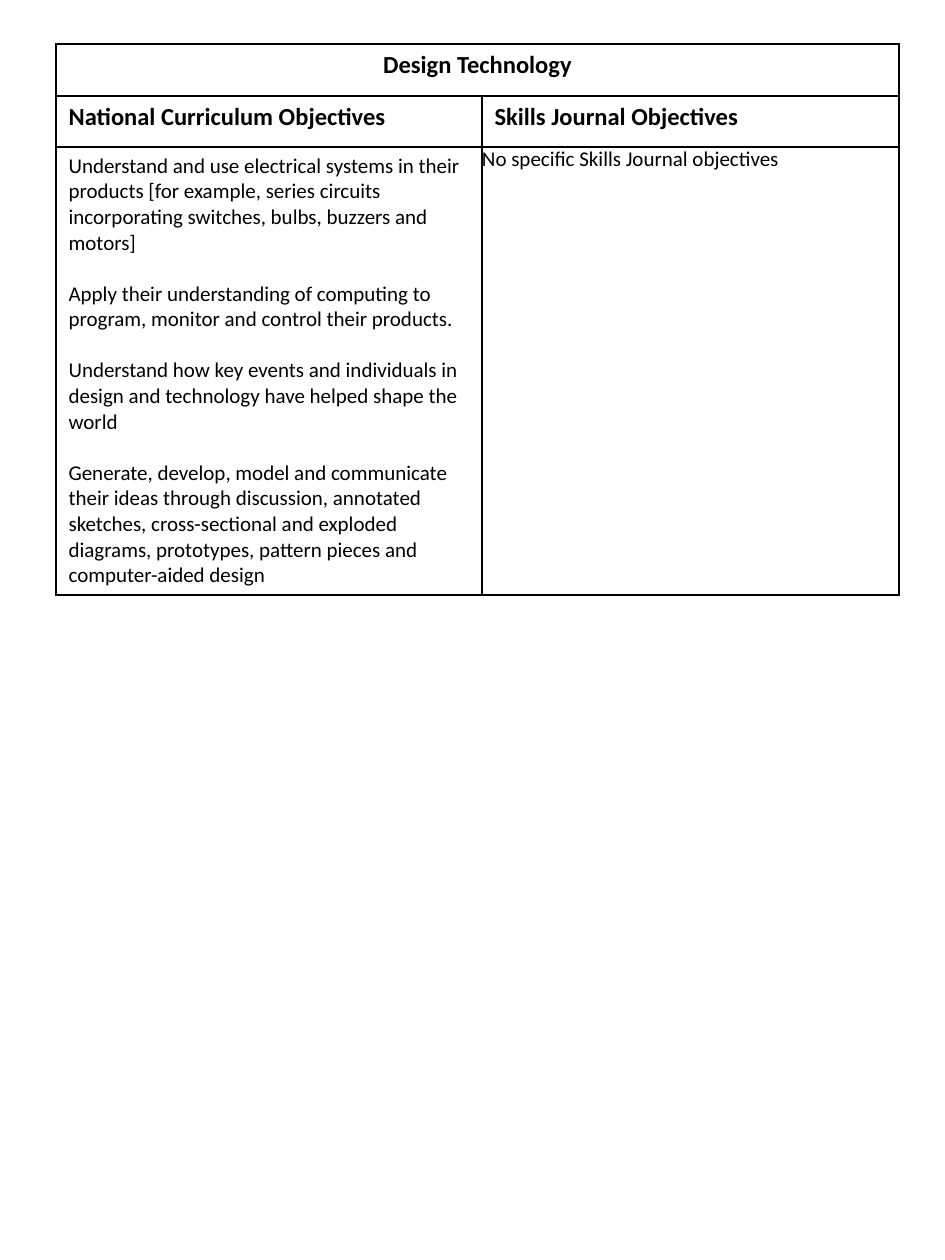
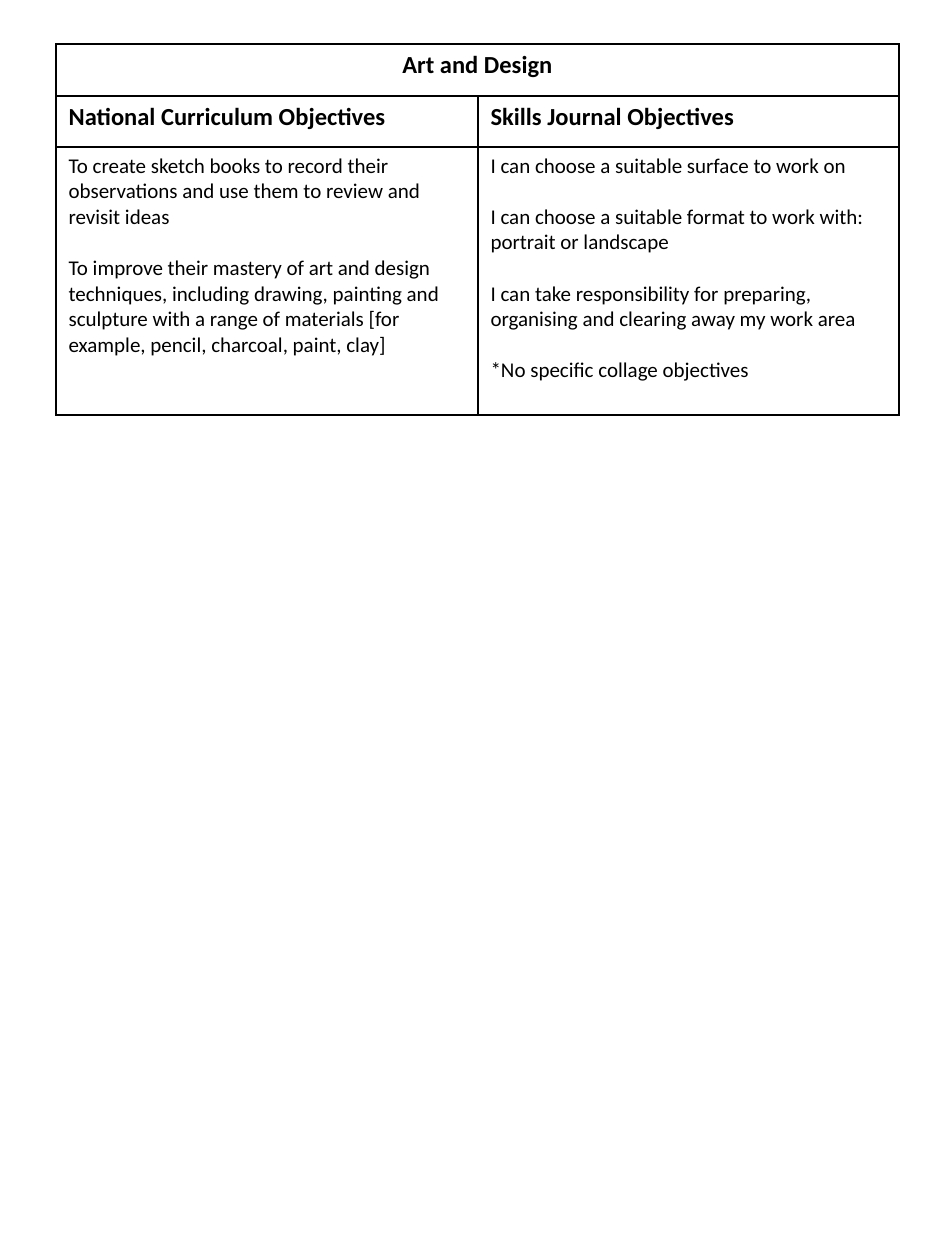
from dataclasses import dataclass

from lxml.etree import SubElement
from pptx import Presentation
from pptx.dml.color import RGBColor
from pptx.enum.text import PP_ALIGN as Align
from pptx.oxml.ns import qn
from pptx.slide import Slide
from pptx.table import _Cell as Cell
from pptx.util import Emu, Pt

EMU_PER_PX = 914400 / 126
PAGE_WIDTH, PAGE_HEIGHT = 945, 1260
TABLE_LEFT, TABLE_TOP = 56, 44
HEADING_HEIGHTS = (52, 51)
BLACK = "000000"
FONT = "Calibri"
HEADING_SIZE, BODY_SIZE = 14, 12
PARAGRAPH_GAP = 14.6
BORDER_WIDTH = 1
COLUMN_HEADINGS = ("National Curriculum Objectives", "Skills Journal Objectives")


@dataclass(frozen=True)
class Subject:
    title: str
    column_widths: tuple[int, int]
    body_height: int
    curriculum: tuple[str, ...]
    skills: tuple[str, ...]
    skills_flush: bool = False


SUBJECTS = (
    Subject(
        "Design Technology",
        (426, 417),
        448,
        (
            "Understand and use electrical systems in their products [for example, "
            "series circuits incorporating switches, bulbs, buzzers and motors]",
            "Apply their understanding of computing to program, monitor and control "
            "their products.",
            "Understand how key events and individuals in design and technology have "
            "helped shape the world",
            "Generate, develop, model and communicate their ideas through discussion, "
            "annotated sketches, cross-sectional and exploded diagrams, prototypes, "
            "pattern pieces and computer-aided design",
        ),
        ("No specific Skills Journal objectives",),
        skills_flush=True,
    ),
    Subject(
        "Art and Design",
        (422, 421),
        268,
        (
            "To create sketch books to record their observations and use them to "
            "review and revisit ideas",
            "To improve their mastery of art and design techniques, including drawing, "
            "painting and sculpture with a range of materials [for example, pencil, "
            "charcoal, paint, clay]",
        ),
        (
            "I can choose a suitable surface to work on",
            "I can choose a suitable format to work with: portrait or landscape",
            "I can take responsibility for preparing, organising and clearing away "
            "my work area",
            "*No specific collage objectives",
        ),
    ),
)


def px(length: int) -> Emu:
    return Emu(round(length * EMU_PER_PX))


def colour(value: str) -> RGBColor:
    return RGBColor.from_string(value)


def style_cell(cell: Cell) -> None:
    properties = cell._tc.get_or_add_tcPr()
    for edge in ("a:lnL", "a:lnR", "a:lnT", "a:lnB"):
        line = SubElement(properties, qn(edge), w=str(Pt(BORDER_WIDTH)))
        fill = SubElement(line, qn("a:solidFill"))
        SubElement(fill, qn("a:srgbClr"), val=BLACK)
    cell.fill.background()


def write_cell(cell: Cell, texts: tuple[str, ...], size: int, bold: bool = False,
               align: Align = Align.LEFT) -> None:
    frame = cell.text_frame
    for index, text in enumerate(texts):
        para = frame.add_paragraph() if index else frame.paragraphs[0]
        para.alignment = align
        if index:
            para.space_before = Pt(PARAGRAPH_GAP)
        span = para.add_run()
        span.text = text
        span.font.name = FONT
        span.font.size = Pt(size)
        span.font.bold = bold
        span.font.color.rgb = colour(BLACK)


def draw_objectives(page: Slide, subject: Subject) -> None:
    heights = (*HEADING_HEIGHTS, subject.body_height)
    table = page.shapes.add_table(
        len(heights), len(subject.column_widths), px(TABLE_LEFT), px(TABLE_TOP),
        px(sum(subject.column_widths)), px(sum(heights)),
    ).table
    table.first_row = False
    table.horz_banding = False
    for column, width in zip(table.columns, subject.column_widths):
        column.width = px(width)
    for row, height in zip(table.rows, heights):
        row.height = px(height)
    for cell in table.iter_cells():
        style_cell(cell)

    title_cell = table.cell(0, 0)
    title_cell.merge(table.cell(0, 1))
    write_cell(title_cell, (subject.title,), HEADING_SIZE, True, Align.CENTER)
    for index, heading in enumerate(COLUMN_HEADINGS):
        write_cell(table.cell(1, index), (heading,), HEADING_SIZE, True)
    for index, objectives in enumerate((subject.curriculum, subject.skills)):
        write_cell(table.cell(2, index), objectives, BODY_SIZE)
    if subject.skills_flush:
        skills_cell = table.cell(2, 1)
        skills_cell.margin_left = skills_cell.margin_right = 0
        skills_cell.margin_top = skills_cell.margin_bottom = 0


def main() -> None:
    deck = Presentation()
    deck.slide_width, deck.slide_height = px(PAGE_WIDTH), px(PAGE_HEIGHT)
    for subject in SUBJECTS:
        page = deck.slides.add_slide(deck.slide_layouts[6])
        draw_objectives(page, subject)
    deck.save("out.pptx")


if __name__ == "__main__":
    main()
